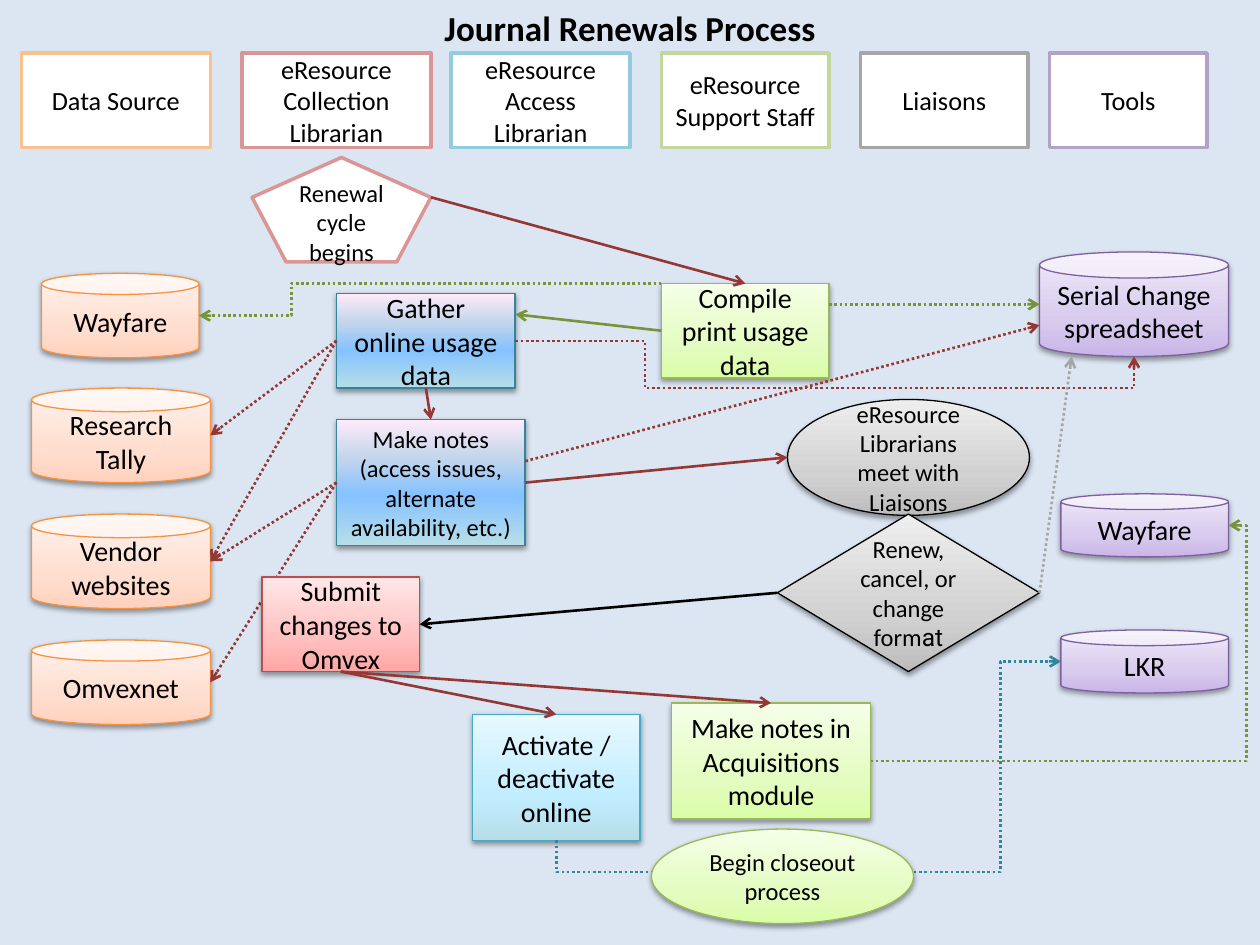
from lxml import etree
from pptx import Presentation
from pptx.dml.color import RGBColor
from pptx.enum.dml import MSO_LINE
from pptx.enum.shapes import MSO_CONNECTOR, MSO_SHAPE
from pptx.enum.text import MSO_ANCHOR, PP_ALIGN
from pptx.oxml.ns import qn
from pptx.util import Inches, Pt

RECT, CAN, OVAL = MSO_SHAPE.RECTANGLE, MSO_SHAPE.CAN, MSO_SHAPE.OVAL
DIAMOND, PENTAGON = MSO_SHAPE.DIAMOND, MSO_SHAPE.REGULAR_PENTAGON
CLOSEOUT = MSO_SHAPE.FLOWCHART_CONNECTOR
STRAIGHT, ELBOW = MSO_CONNECTOR.STRAIGHT, MSO_CONNECTOR.ELBOW
DOTTED = MSO_LINE.ROUND_DOT
CENTER, MIDDLE, TOP_ANCHOR = PP_ALIGN.CENTER, MSO_ANCHOR.MIDDLE, MSO_ANCHOR.TOP

FONT = "Calibri"
COLORS = {
    "background": "DCE6F2", "text": "000000", "white": "FFFFFF",
    "orange": "FAC090", "rose": "D99694", "aqua": "93CDDD",
    "lime": "C3D69B", "gray": "A6A6A6", "lilac": "B3A2C7",
    "maroon": "953735", "green": "77933C", "teal": "31859C", "black": "000000",
}
THEMES = {
    "staff": ("98B955", 0.75, [(0, "DAFDA7"), (35, "E4FCC2"), (100, "F5FFE7")]),
    "access": ("46AAC5", 0.75, [(0, "B7DEE8"), (35, "C1EDFF"), (100, "E7F8FF")]),
    "tool": ("7D60A0", 0.75, [(0, "C9B5E8"), (35, "D8CBEE"), (100, "F0EAF9")]),
    "source": ("F69240", 0.75, [(0, "FFD2BD"), (35, "FFDED0"), (100, "FFF2ED")]),
    "liaison": ("000000", 0.75, [(0, "BDBDBD"), (35, "D1D1D1"), (100, "EEEEEE")]),
    "submit": ("BF4C48", 0.75, [(0, "FFA6A5"), (35, "FFC0BF"), (100, "FFE7E7")]),
    "usage": ("31859C", 1, [(0, "B7DEE8"), (40, "85C2FF"), (70, "C4D6EB"), (100, "FFEBFA")]),
}
TOP, LEFT, BOTTOM, RIGHT = (0.5, 0), (0, 0.5), (0.5, 1), (1, 0.5)
SIDES = [TOP, LEFT, BOTTOM, RIGHT]


def rgb(name):
    return RGBColor.from_string(COLORS[name])


def format_text(frame, size, bold=False):
    for paragraph in frame.paragraphs:
        paragraph.alignment = CENTER
        for run in paragraph.runs:
            run.font.name = FONT
            run.font.size = Pt(size)
            run.font.bold = bold
            run.font.color.rgb = rgb("text")


def add_box(slide, kind, box, text, size):
    shape = slide.shapes.add_shape(kind, *map(Inches, box))
    shape.shadow.inherit = False
    frame = shape.text_frame
    frame.word_wrap = True
    frame.vertical_anchor = MIDDLE
    frame.text = text
    format_text(frame, size)
    return shape


def add_plain(slide, kind, box, text, size, outline):
    shape = add_box(slide, kind, box, text, size)
    shape.fill.solid()
    shape.fill.fore_color.rgb = rgb("white")
    shape.line.color.rgb = rgb(outline)
    shape.line.width = Pt(2)
    return shape


def add_step(slide, kind, box, text, theme, size=16):
    shape = add_box(slide, kind, box, text, size)
    outline, width, stops = THEMES[theme]
    shape.line.color.rgb = RGBColor.from_string(outline)
    shape.line.width = Pt(width)
    shape.fill.gradient()
    shape.fill.gradient_angle = 90
    properties = shape.element.spPr
    stop_list = properties.find(qn("a:gradFill")).find(qn("a:gsLst"))
    for old_stop in list(stop_list):
        stop_list.remove(old_stop)
    for position, color in stops:
        stop = etree.SubElement(stop_list, qn("a:gs"), pos=str(position * 1000))
        etree.SubElement(stop, qn("a:srgbClr"), val=color)
    shadow = etree.SubElement(properties.find(qn("a:effectLst")), qn("a:outerShdw"),
                              blurRad="40000", dist="20000", dir="5400000", rotWithShape="0")
    shade = etree.SubElement(shadow, qn("a:srgbClr"), val="000000")
    etree.SubElement(shade, qn("a:alpha"), val="38000")
    return shape


def anchor(step, spot):
    return (int(step.left + step.width * spot[0]), int(step.top + step.height * spot[1]))


def style_arrow(arrow, color, dotted):
    arrow.line.color.rgb = rgb(color)
    arrow.line.width = Pt(1.5)
    if dotted:
        arrow.line.dash_style = DOTTED
    properties = arrow.element.spPr
    etree.SubElement(properties.find(qn("a:ln")), qn("a:tailEnd"), type="arrow")
    if properties.find(qn("a:effectLst")) is None:
        etree.SubElement(properties, qn("a:effectLst"))


def add_link(slide, start, start_spot, end, end_spot, color="maroon", dotted=False):
    arrow = slide.shapes.add_connector(
        STRAIGHT, *anchor(start, start_spot), *anchor(end, end_spot))
    for step, spot, connect in ((start, start_spot, arrow.begin_connect),
                                (end, end_spot, arrow.end_connect)):
        if step.auto_shape_type in (RECT, DIAMOND) and spot in SIDES:
            connect(step, SIDES.index(spot))
    style_arrow(arrow, color, dotted)


def add_elbow(slide, start, start_spot, end, end_spot, color, bend):
    arrow = slide.shapes.add_connector(
        ELBOW, *anchor(start, start_spot), *anchor(end, end_spot))
    guides = arrow.element.spPr.find(qn("a:prstGeom")).get_or_add_avLst()
    etree.SubElement(guides, qn("a:gd"), name="adj1", fmla=f"val {round(bend * 100000)}")
    style_arrow(arrow, color, True)


def add_route(slide, points, color):
    builder = slide.shapes.build_freeform(*points[0])
    builder.add_line_segments(points[1:], close=False)
    route = builder.convert_to_shape()
    route.shadow.inherit = False
    route.fill.background()
    style_arrow(route, color, True)


def draw_title(slide, box):
    title = slide.shapes.title
    title.left, title.top, title.width, title.height = map(Inches, box)
    title.text_frame.text = "Journal Renewals Process"
    title.text_frame.vertical_anchor = TOP_ANCHOR
    format_text(title.text_frame, 20, bold=True)


def draw_headers(slide, left, top, height):
    for offset, width, role, outline in [
        (0, 1.5, "Data Source", "orange"),
        (1.75, 1.5, "eResource Collection Librarian", "rose"),
        (3.41, 1.42, "eResource Access Librarian", "aqua"),
        (5.08, 1.33, "eResource Support Staff", "lime"),
        (6.66, 1.33, "Liaisons", "gray"),
        (8.16, 1.25, "Tools", "lilac"),
    ]:
        add_plain(slide, RECT, (left + offset, top, width, height), role, 15, outline)


def draw_cans(slide, left, top, theme, cans):
    return [add_step(slide, CAN, (left + dx, top + dy, width, height), text, theme)
            for dx, dy, width, height, text in cans]


def draw_usage(slide, left, top, sources, spreadsheet):
    catalog, stats, vendors, subscriptions = sources
    begin = add_plain(slide, PENTAGON, (left, top, 1.42, 0.83), "Renewal cycle begins", 14, "rose")
    compiled = add_step(slide, RECT, (left + 3.25, top + 1, 1.33, 0.75),
                        "Compile print usage data", "staff")
    gather = add_step(slide, RECT, (left + 0.67, top + 1.08, 1.42, 0.75),
                      "Gather online usage data", "usage")
    notes = add_step(slide, RECT, (left + 0.67, top + 2.08, 1.5, 1),
                     "Make notes (access issues, alternate availability, etc.)", "usage", 14)
    add_link(slide, begin, (1, 0.38), compiled, TOP)
    add_link(slide, compiled, LEFT, gather, (1, 0.22), "green")
    add_link(slide, gather, BOTTOM, notes, TOP)
    for step, source in [(gather, stats), (gather, vendors), (notes, vendors),
                         (notes, subscriptions)]:
        add_link(slide, step, LEFT, source, RIGHT, dotted=True)
    add_elbow(slide, compiled, (0, 0), catalog, RIGHT, "green", 0.8)
    add_link(slide, compiled, (1, 0.22), spreadsheet, LEFT, "green", True)
    add_link(slide, notes, (1, 0.33), spreadsheet, (0, 0.7), dotted=True)
    start, end = anchor(gather, RIGHT), anchor(spreadsheet, BOTTOM)
    turn, lane = Inches(left + 3.12), Inches(top + 1.83)
    add_route(slide, [start, (turn, start[1]), (turn, lane), (end[0], lane), end], "maroon")
    return notes


def draw_liaisons(slide, left, top, notes, spreadsheet):
    meeting = add_step(slide, OVAL, (left + 0.08, top, 1.92, 0.92),
                       "eResource Librarians meet with Liaisons", "liaison", 14)
    decision = add_step(slide, DIAMOND, (left, top + 0.91, 2.08, 1.25),
                        "Renew, cancel, or change form", "liaison", 14)
    ending = decision.text_frame.paragraphs[0].add_run()
    ending.text = "at"
    ending.font.name = "Roboto"
    ending.font.size = Pt(14)
    ending.font.color.rgb = rgb("text")
    add_link(slide, notes, RIGHT, meeting, LEFT)
    add_link(slide, decision, RIGHT, spreadsheet, (0.17, 1), "gray", True)
    return decision


def draw_closeout(slide, left, top, decision, catalog, resolver):
    submit = add_step(slide, RECT, (left, top, 1.25, 0.75), "Submit changes to Omvex", "submit")
    activate = add_step(slide, RECT, (left + 1.67, top + 1.09, 1.33, 1),
                        "Activate / deactivate online", "access")
    module = add_step(slide, RECT, (left + 3.25, top + 1, 1.58, 0.92),
                      "Make notes in Acquisitions module", "staff")
    add_link(slide, decision, LEFT, submit, RIGHT, "black")
    for step in (activate, module):
        add_link(slide, submit, BOTTOM, step, TOP)
    add_elbow(slide, module, RIGHT, catalog, RIGHT, "green", 1.05)
    start, end = anchor(activate, BOTTOM), anchor(resolver, LEFT)
    lane, turn = Inches(top + 2.34), Inches(left + 5.86)
    add_route(slide, [start, (start[0], lane), (turn, lane), (turn, end[1]), end], "teal")
    add_step(slide, CLOSEOUT, (left + 3.09, top + 2, 2.08, 0.75),
             "Begin closeout process", "staff", 14)


def main():
    deck = Presentation()
    deck.slide_width, deck.slide_height = Inches(10), Inches(7.5)
    slide = deck.slides.add_slide(deck.slide_layouts[5])
    slide.background.fill.solid()
    slide.background.fill.fore_color.rgb = rgb("background")
    draw_title(slide, (0, 0, 10, 0.44))
    draw_headers(slide, 0.17, 0.42, 0.75)
    sources = draw_cans(slide, 0.25, 2.17, "source", [
        (0.08, 0, 1.25, 0.67, "Wayfare"),
        (0, 0.91, 1.42, 0.75, "Research Tally"),
        (0, 1.91, 1.42, 0.75, "Vendor websites"),
        (0, 2.91, 1.42, 0.67, "Omvexnet"),
    ])
    spreadsheet, catalog, resolver = draw_cans(slide, 8.25, 2, "tool", [
        (0, 0, 1.5, 0.83, "Serial Change spreadsheet"),
        (0.17, 1.92, 1.33, 0.5, "Wayfare"),
        (0.17, 3, 1.33, 0.5, "LKR"),
    ])
    notes = draw_usage(slide, 2, 1.25, sources, spreadsheet)
    decision = draw_liaisons(slide, 6.17, 3.17, notes, spreadsheet)
    draw_closeout(slide, 2.08, 4.58, decision, catalog, resolver)
    deck.save("out.pptx")


if __name__ == "__main__":
    main()
